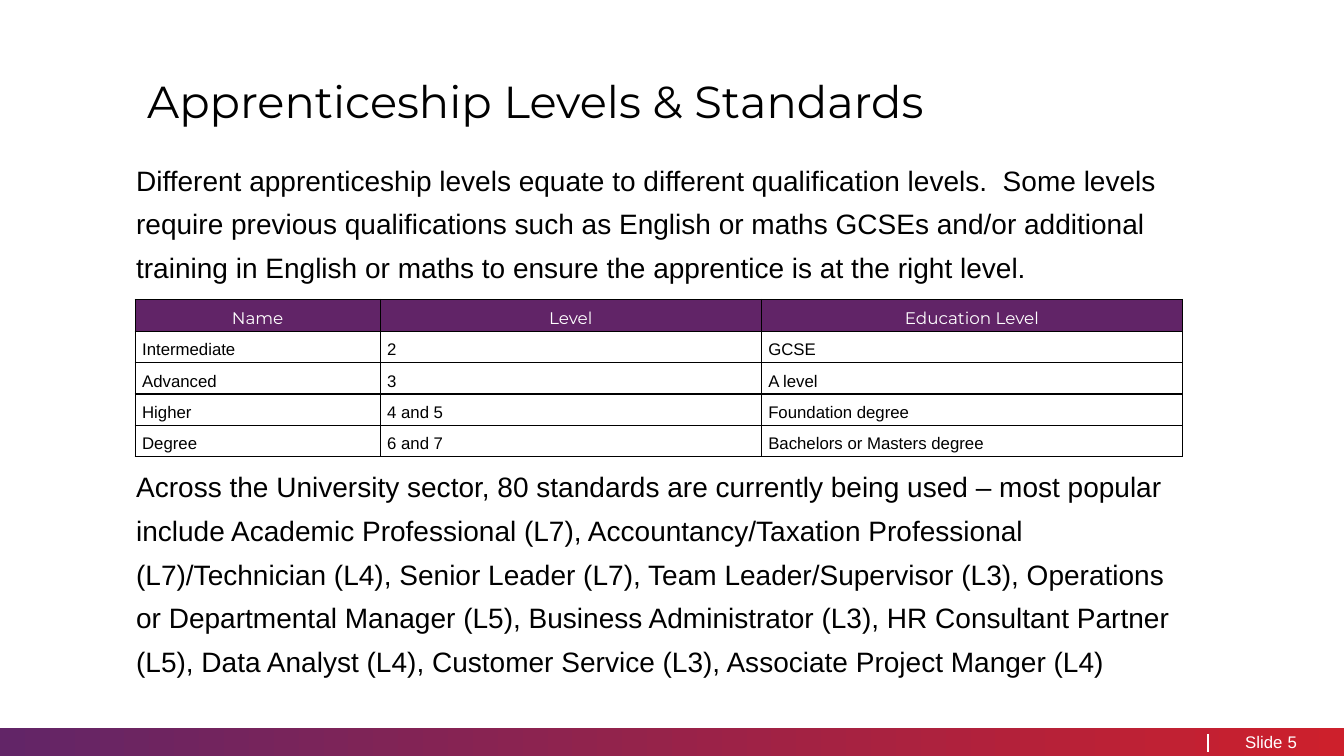
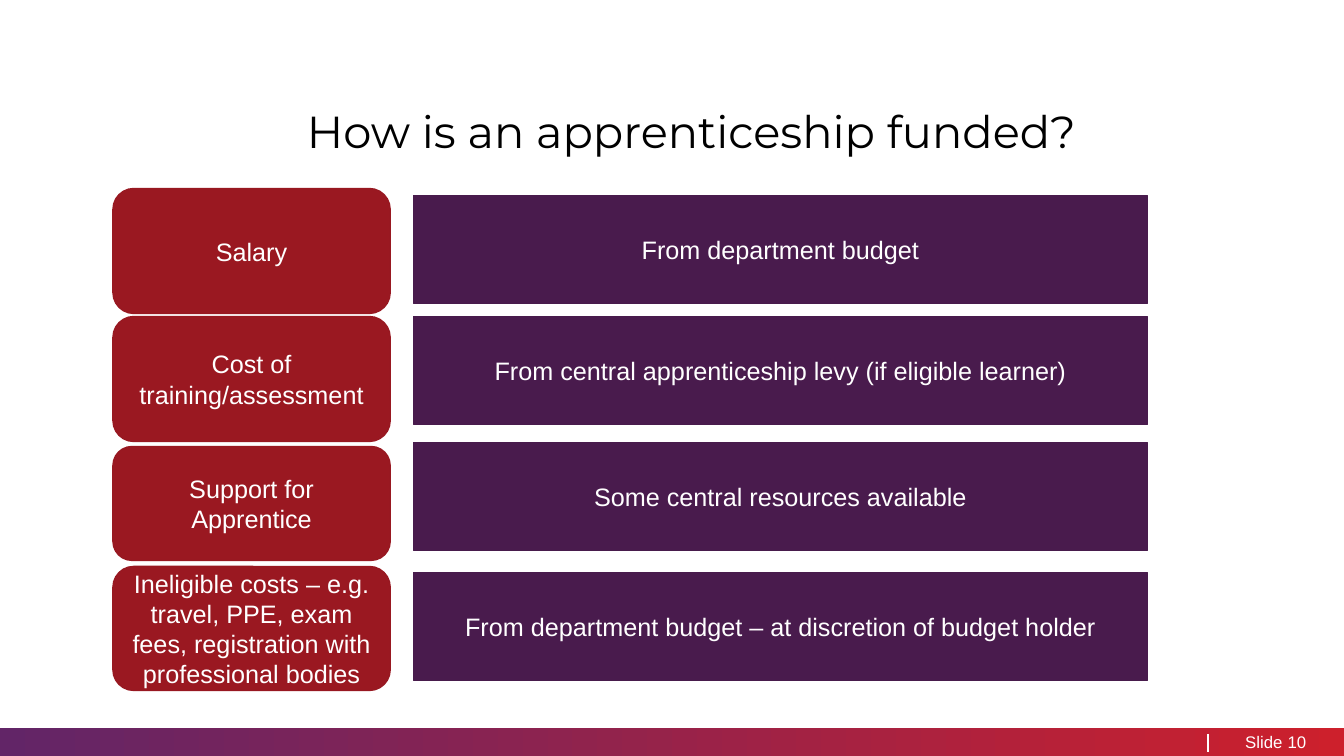
from lxml import etree
from pptx import Presentation
from pptx import util as u
from pptx.dml.color import RGBColor
from pptx.enum import shapes, text
from pptx.oxml.ns import qn

PX = 9144  # 100 px to the inch
COLORS = {
    "black": "000000", "white": "FFFFFF",
    "band_start": "622567", "band_end": "CD202C", "header": "612467",
    "red": "9A1821", "red_line": "981821",
    "purple": "491B4D", "purple_line": "481B4C",
}
RGB = {name: RGBColor.from_string(value) for name, value in COLORS.items()}
LEFT, CENTER, RIGHT = text.PP_ALIGN.LEFT, text.PP_ALIGN.CENTER, text.PP_ALIGN.RIGHT
TOP, MIDDLE = text.MSO_ANCHOR.TOP, text.MSO_ANCHOR.MIDDLE


def px(*lengths):
    return [u.Emu(length * PX) for length in lengths]


def write(frame, words, size, color, align=LEFT, anchor=MIDDLE, font="Arial",
          spacing=1.0, insets=(10, 5, 10, 5)):
    """Fill a text frame with one formatted paragraph; insets run left, top, right, bottom."""
    left, top, right, bottom = px(*insets)
    frame.text = words
    para = frame.paragraphs[0]
    formats = (
        (frame, {"word_wrap": True, "auto_size": text.MSO_AUTO_SIZE.NONE,
                 "vertical_anchor": anchor, "margin_left": left, "margin_top": top,
                 "margin_right": right, "margin_bottom": bottom}),
        (para, {"alignment": align, "line_spacing": spacing}),
        (para.runs[0].font, {"size": u.Pt(size), "name": font}),
    )
    for target, values in formats:
        for name, value in values.items():
            setattr(target, name, value)
    para.runs[0].font.color.rgb = RGB[color]


deck = Presentation()
deck.slide_width, deck.slide_height = px(1333, 750)

# Titles and footers
pages = []
for heading, number, left, top, align in (
    ("Apprenticeship Levels & Standards", "5", 146, 52, LEFT),
    ("How is an apprenticeship funded?", "10", 112, 82, CENTER),
):
    page = deck.slides.add_slide(deck.slide_layouts[5])
    pages.append(page)
    title = page.shapes.title
    title.left, title.top, title.width, title.height = px(left, top, 1148, 81)
    write(title.text_frame, heading, 32, "black", align, TOP, "Montserrat", 1.3, (0, 5, 0, 5))

    band = page.shapes.add_shape(shapes.MSO_SHAPE.RECTANGLE, *px(0, 722, 1333, 28))
    band.shadow.inherit = False
    band.line.fill.background()
    band.fill.gradient()
    band.fill.gradient_angle = 0
    for stop, position, color in zip(band.fill.gradient_stops, (0, 1), ("band_start", "band_end")):
        stop.position = position
        stop.color.rgb = RGB[color]

    divider = page.shapes.add_connector(shapes.MSO_CONNECTOR.STRAIGHT, *px(1198, 728, 1198, 746))
    divider.line.color.rgb = RGB["white"]
    divider.line.width = u.Pt(1)
    etree.SubElement(divider._element.spPr, qn("a:effectLst"))

    for words, box_left, width, box_align in (("Slide", 1210, 62, RIGHT), (number, 1277, 33, LEFT)):
        box = page.shapes.add_textbox(*px(box_left, 722, width, 28))
        write(box.text_frame, words, 12, "white", box_align, insets=(0, 5, 0, 5))

levels_page, funding_page = pages

# Levels and standards
for words, top, height in (
    ("Different apprenticeship levels equate to different qualification levels.  Some levels "
     "require previous qualifications such as English or maths GCSEs and/or additional training "
     "in English or maths to ensure the apprentice is at the right level.", 136, 150),
    ("Across the University sector, 80 standards are currently being used – most popular include "
     "Academic Professional (L7), Accountancy/Taxation Professional (L7)/Technician (L4), Senior "
     "Leader (L7), Team Leader/Supervisor (L3), Operations or Departmental Manager (L5), Business "
     "Administrator (L3), HR Consultant Partner (L5), Data Analyst (L4), Customer Service (L3), "
     "Associate Project Manger (L4)", 440, 240),
):
    box = levels_page.shapes.add_textbox(*px(134, top, 1039, height))
    write(box.text_frame, words, 20, "black", anchor=TOP, spacing=1.3, insets=(1, 16, 0, 0))

levels = (
    ("Name", "Level", "Education Level"),
    ("Intermediate", "2", "GCSE"),
    ("Advanced", "3", "A level"),
    ("Higher", "4 and 5", "Foundation degree"),
    ("Degree", "6 and 7", "Bachelors or Masters degree"),
)
table = levels_page.shapes.add_table(len(levels), 3, *px(134, 297, 1039, 156)).table
table.first_row = table.horz_banding = False
for column, width in zip(table.columns, px(243, 378, 418)):
    column.width = width
for row, height in zip(table.rows, px(32, 31, 31, 31, 31)):
    row.height = height
for row_index, row_words in enumerate(levels):
    is_header = row_index == 0
    for column_index, words in enumerate(row_words):
        cell = table.cell(row_index, column_index)
        write(cell.text_frame, words, 12, "white" if is_header else "black",
              CENTER if is_header else LEFT, font="Montserrat" if is_header else "Arial",
              spacing=1.3)
        cell.vertical_anchor = MIDDLE
        cell.margin_left, cell.margin_top, cell.margin_right, cell.margin_bottom = px(7, 0, 7, 0)
        properties = cell._tc.get_or_add_tcPr()
        for side in ("a:lnL", "a:lnR", "a:lnT", "a:lnB"):
            border = etree.SubElement(properties, qn(side), w=str(u.Pt(1)))
            fill = etree.SubElement(border, qn("a:solidFill"))
            etree.SubElement(fill, qn("a:srgbClr"), val=COLORS["black"])
        cell.fill.solid()
        cell.fill.fore_color.rgb = RGB["header" if is_header else "white"]

# Funding: cost on the left, source of the money on the right
ROUNDED, RECTANGLE = shapes.MSO_SHAPE.ROUNDED_RECTANGLE, shapes.MSO_SHAPE.RECTANGLE
for cost, cost_top, cost_height, source, source_top in (
    ("Salary", 187, 124, "From department budget", 194),
    ("Cost of training/assessment", 314, 124,
     "From central apprenticeship levy (if eligible learner)", 314),
    ("Support for Apprentice", 443, 113, "Some central resources available", 439),
    ("Ineligible costs – e.g. travel, PPE, exam fees, registration with professional bodies",
     562, 123, "From department budget – at discretion of budget holder", 568),
):
    for kind, words, color, place in (
        (ROUNDED, cost, "red", (112, cost_top, 275, cost_height)),
        (RECTANGLE, source, "purple", (410, source_top, 728, 107)),
    ):
        box = funding_page.shapes.add_shape(kind, *px(*place))
        box.shadow.inherit = False
        box.fill.solid()
        box.fill.fore_color.rgb = RGB[color]
        box.line.color.rgb = RGB[color + "_line"]
        box.line.width = u.Pt(1)
        write(box.text_frame, words, 18, "white", CENTER)

deck.save("out.pptx")
